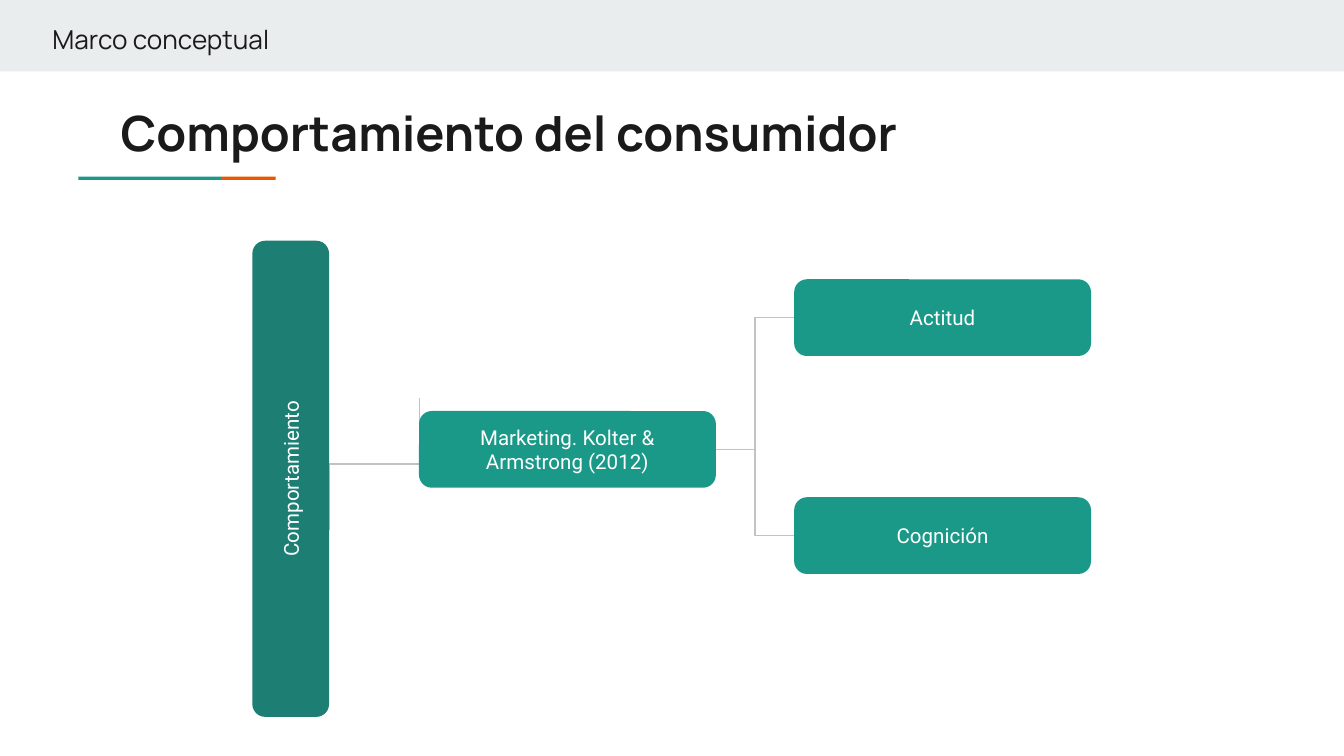
import pptx
import pptx.util
import pptx.dml.color
import pptx.enum.shapes
import pptx.enum.text
import pptx.oxml

Cm = pptx.util.Cm
Pt = pptx.util.Pt
RGBColor = pptx.dml.color.RGBColor
Shape = pptx.enum.shapes.MSO_SHAPE
ELBOW = pptx.enum.shapes.MSO_CONNECTOR.ELBOW

BAND = RGBColor(0xE9, 0xED, 0xEE)
INK = RGBColor(0x1A, 0x1A, 0x1A)
TEAL = RGBColor(0x1A, 0x99, 0x88)
DARK_TEAL = RGBColor(0x1D, 0x7E, 0x74)
ORANGE = RGBColor(0xEB, 0x56, 0x00)
GREY = RGBColor(0xC2, 0xC2, 0xC2)
WHITE = RGBColor(0xFF, 0xFF, 0xFF)


def add_block(page, kind, box, color):
    """Add a plain filled shape in a box given in centimetres."""
    shape = page.shapes.add_shape(kind, *map(Cm, box))
    shape.shadow.inherit = False
    shape.fill.solid()
    shape.fill.fore_color.rgb = color
    shape.line.fill.background()
    return shape


def write(shape, text, font_name, size, color, bold=False):
    """Write one paragraph in a shape and return it."""
    frame = shape.text_frame
    frame.word_wrap = True
    frame.margin_left = frame.margin_right = Cm(0.25)
    frame.margin_top = frame.margin_bottom = Cm(0.25)
    para = frame.paragraphs[0]
    para.text = text
    para.font.name = font_name
    para.font.size = Pt(size)
    para.font.bold = bold
    para.font.color.rgb = color
    return para


def add_heading(page, box, text, size, bold=False):
    """Add a heading text box."""
    heading = page.shapes.add_textbox(*map(Cm, box))
    write(heading, text, "Manrope", size, INK, bold)


def add_node(page, box, text, color=TEAL):
    """Add a rounded box with a centred label."""
    node = add_block(page, Shape.ROUNDED_RECTANGLE, box, color)
    para = write(node, text, "Roboto", 11, WHITE)
    para.alignment = pptx.enum.text.PP_ALIGN.CENTER
    node.text_frame.vertical_anchor = pptx.enum.text.MSO_ANCHOR.MIDDLE
    return node


def add_elbow(page, start, end):
    """Add a thin bent connector between two points."""
    elbow = page.shapes.add_connector(ELBOW, *map(Cm, (*start, *end)))
    elbow.line.color.rgb = GREY
    elbow.line.width = Pt(0.75)
    properties = elbow._element.spPr
    properties.append(pptx.oxml.parse_xml(
        '<a:effectLst xmlns:a="http://schemas.openxmlformats.org/drawingml/2006/main"/>'))
    return elbow


def add_header(page, box):
    """Add the top band with the section name."""
    left, top, width, height = box
    add_block(page, Shape.RECTANGLE, box, BAND)
    add_heading(page, (left + 0.74, top + 0.2, width - 4, 1.5), "Marco conceptual", 14)


def add_title(page, box):
    """Add the slide title and its two-colour underline."""
    left, top, width, height = box
    add_heading(page, (left + 0.55, top, width - 0.55, 1.5),
                "Comportamiento del consumidor", 26, True)
    rule_top = top + height - 0.06
    add_block(page, Shape.RECTANGLE, (left, rule_top, 2.7, 0.06), TEAL)
    add_block(page, Shape.RECTANGLE, (left + 2.7, rule_top, 1.03, 0.06), ORANGE)


def add_diagram(page, box):
    """Add the tree that leads from the upright root to two leaves."""
    left, top, width, height = box
    node_width, node_height = 5.61, 1.45

    trunk = add_elbow(page, (left + 1.06, top + 3.37), (left + 3.55, top + 5.07))
    trunk._element.spPr.get_or_add_xfrm().set("rot", str(270 * 60000))

    inset = (height - node_height) / 2
    root = add_node(page, (left - inset, top + inset, height, node_height),
                    "Comportamiento", DARK_TEAL)
    root.rotation = 270

    source = add_node(page, (left + 3.15, top + 3.22, node_width, node_height),
                      "Marketing. Kolter & Armstrong (2012)")
    leaf_left = left + width - node_width
    for label, offset in (("Actitud", 0.73), ("Cognición", 4.85)):
        leaf = add_node(page, (leaf_left, top + offset, node_width, node_height), label)
        middle = node_height / 2
        branch = add_elbow(page, (left + 3.15 + node_width, top + 3.22 + middle),
                           (leaf_left, top + offset + middle))
        branch.begin_connect(source, 3)
        branch.end_connect(leaf, 1)


def main():
    """Build the deck and save it."""
    deck = pptx.Presentation()
    deck.slide_width = Cm(25.4)
    deck.slide_height = Cm(14.29)
    page = deck.slides.add_slide(deck.slide_layouts[6])
    add_header(page, (0, 0, 25.4, 1.35))
    add_title(page, (1.48, 1.7, 21.91, 1.7))
    add_diagram(page, (4.77, 4.55, 15.85, 9))
    deck.save("out.pptx")


if __name__ == "__main__":
    main()
